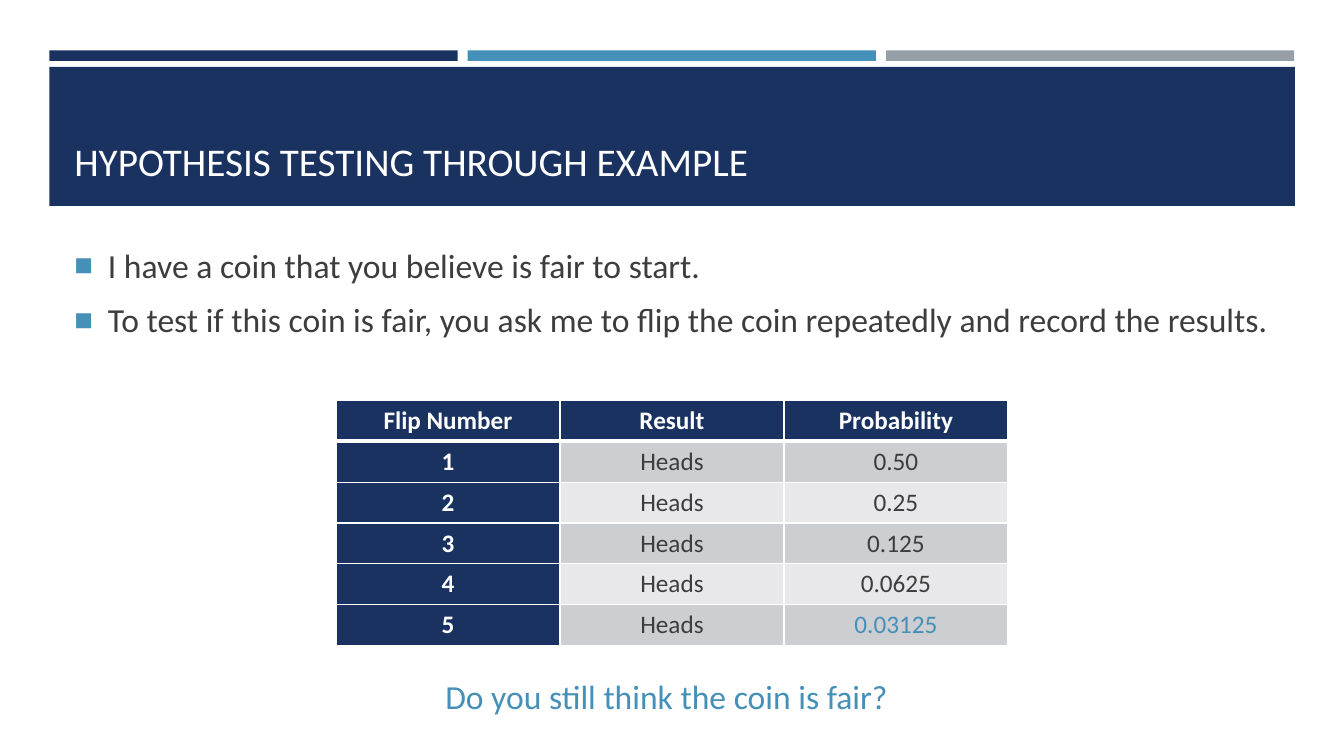
"""Build a slide on hypothesis testing with repeated coin flips."""
from lxml.etree import SubElement
from pptx import Presentation
from pptx.dml.color import RGBColor
from pptx.enum.shapes import MSO_SHAPE
from pptx.enum.text import MSO_ANCHOR, PP_ALIGN
from pptx.oxml import parse_xml
from pptx.oxml.ns import nsdecls, qn
from pptx.util import Pt

NAVY, BLUE, GREY, WHITE, TEXT = "1A3260", "4590B8", "969FA7", "FFFFFF", "3D3D3D"
BANDS = ["E8E8EA", "CDCED2"]


def rgb(value):
    return RGBColor.from_string(value)


def write(p, text, size, color, bold=False):
    r = p.add_run()
    r.text = text
    r.font.color.rgb = rgb(color)
    fmt = {"name": "Calibri", "size": Pt(size), "bold": bold}
    for name, value in fmt.items():
        setattr(r.font, name, value)


prs = Presentation()
prs.slide_width, prs.slide_height = Pt(960), Pt(540)
s = prs.slides.add_slide(prs.slide_layouts[6])

bars = [(35.3 + i * 298.8, 36, 291.6, 7.5, color)
        for i, color in enumerate([NAVY, BLUE, GREY])]
bars.append((35.3, 47.7, 889.6, 99.3, NAVY))
for x, y, w, h, color in bars:
    sp = s.shapes.add_shape(MSO_SHAPE.RECTANGLE, Pt(x), Pt(y), Pt(w), Pt(h))
    sp.shadow.inherit = False
    sp.fill.solid()
    sp.fill.fore_color.rgb = rgb(color)
    sp.line.fill.background()

texts = [
    (46, 171.4, 868.4, 289.4, MSO_ANCHOR.TOP, 24, TEXT, True,
     ["I have a coin that you believe is fair to start.",
      "To test if this coin is fair, you ask me to flip the coin repeatedly and record the results."]),
    (46, 57.6, 868.4, 77.8, MSO_ANCHOR.BOTTOM, 28, WHITE, False,
     ["HYPOTHESIS TESTING THROUGH EXAMPLE"]),
    (311, 479.5, 338.4, 36, MSO_ANCHOR.TOP, 24, BLUE, False,
     ["Do you still think the coin is fair?"]),
]
for x, y, w, h, anchor, size, color, bulleted, lines in texts:
    tf = s.shapes.add_textbox(Pt(x), Pt(y), Pt(w), Pt(h)).text_frame
    tf.word_wrap = True
    tf.vertical_anchor = anchor
    for i, line in enumerate(lines):
        p = tf.paragraphs[0] if i == 0 else tf.add_paragraph()
        write(p, line, size, color)
        if bulleted:
            p.space_before, p.space_after = Pt(4), Pt(6)
            pPr = p._p.get_or_add_pPr()
            pPr.set("marL", str(Pt(24)))
            pPr.set("indent", str(Pt(-24)))
            SubElement(SubElement(pPr, qn("a:buClr")), qn("a:srgbClr"), val=BLUE)
            SubElement(pPr, qn("a:buSzPct"), val="92000")
            SubElement(pPr, qn("a:buFont"), typeface="Arial")
            SubElement(pPr, qn("a:buChar"), char="■")

rows = [["Flip Number", "Result", "Probability"]]
for flip, chance in enumerate(["0.50", "0.25", "0.125", "0.0625", "0.03125"], 1):
    rows.append([str(flip), "Heads", chance])
table = s.shapes.add_table(len(rows), 3, Pt(240), Pt(286), Pt(480), Pt(175.2)).table
for row in table.rows:
    row.height = Pt(29.2)
for r, values in enumerate(rows):
    for c, value in enumerate(values):
        cell = table.cell(r, c)
        head = r == 0 or c == 0
        color = WHITE if head else BLUE if value == "0.03125" else TEXT
        cell.fill.solid()
        cell.fill.fore_color.rgb = rgb(NAVY if head else BANDS[r % 2])
        cell.vertical_anchor = MSO_ANCHOR.MIDDLE
        p = cell.text_frame.paragraphs[0]
        p.alignment = PP_ALIGN.CENTER
        write(p, value, 18, color, head)
        widths = {"L": 1, "R": 1, "T": 3 if r == 1 else 1, "B": 3 if r == 0 else 1}
        for i, (side, width) in enumerate(widths.items()):
            cell._tc.get_or_add_tcPr().insert(i, parse_xml(
                f'<a:ln{side} {nsdecls("a")} w="{Pt(width)}"><a:solidFill>'
                f'<a:srgbClr val="{WHITE}"/></a:solidFill></a:ln{side}>'))

prs.save("out.pptx")
